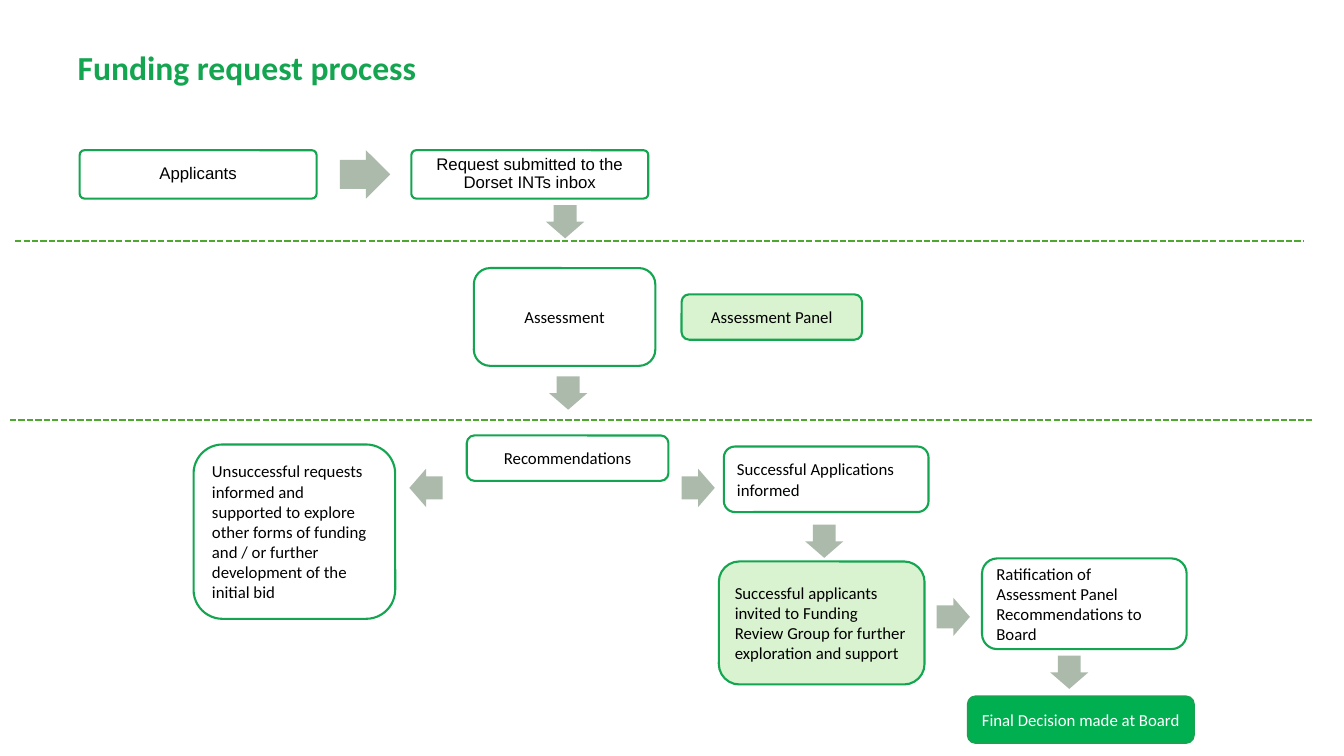
from typing import NamedTuple

from lxml.etree import SubElement
from pptx import Presentation
from pptx.dml.color import RGBColor
from pptx.enum.dml import MSO_LINE_DASH_STYLE as Dash
from pptx.enum.shapes import MSO_CONNECTOR as Connector, MSO_SHAPE as Shape
from pptx.enum.text import MSO_ANCHOR as Anchor, MSO_AUTO_SIZE as AutoSize, PP_ALIGN as Align
from pptx.oxml.ns import qn
from pptx.util import Emu, Pt

EMU_PER_PX = 9144  # 100 px to the inch
GREEN, DASH_GREEN, ARROW_GREY = "14A550", "4EA72E", "ACBAAC"
WHITE, BLACK, PALE_GREEN, DECISION_GREEN = "FFFFFF", "000000", "D9F2D0", "00B050"


class Step(NamedTuple):
    text: str
    left: int
    top: int
    width: int
    height: int
    fill: str = WHITE
    color: str = BLACK
    align: Align = Align.CENTER


class Arrow(NamedTuple):
    left: int
    top: int
    rotation: int = 0
    width: int = 33
    height: int = 38


class Divider(NamedTuple):
    left: int
    right: int
    y: int


REQUEST_STEPS = [
    Step("Applicants", 79, 149, 235, 48),
    Step("Request submitted to the Dorset INTs inbox", 408, 149, 235, 48),
]
REVIEW_STEPS = [
    Step("Assessment", 470, 266, 180, 97),
    Step("Assessment Panel", 676, 292, 179, 45, PALE_GREEN),
    Step("Recommendations", 463, 432, 200, 45),
    Step("Unsuccessful requests informed and supported to explore other forms of funding "
         "and / or further development of the initial bid",
         192, 441, 200, 173, align=Align.LEFT),
    Step("Successful Applications informed", 718, 443, 203, 65, align=Align.LEFT),
    Step("Successful applicants invited to Funding Review Group for further exploration "
         "and support", 713, 557, 204, 122, PALE_GREEN, align=Align.LEFT),
    Step("Ratification of Assessment Panel Recommendations to Board",
         974, 554, 203, 90, align=Align.LEFT),
    Step("Final Decision made at Board", 960, 691, 224, 46, DECISION_GREEN, WHITE),
]
ARROWS = [
    Arrow(337, 149, width=50, height=48),
    Arrow(544, 201, 90),
    Arrow(547, 371, 90),
    Arrow(406, 465, 180),
    Arrow(676, 465),
    Arrow(801, 518, 90),
    Arrow(929, 593),
    Arrow(1044, 648, 90),
]
DIVIDERS = [Divider(15, 1293, 239), Divider(10, 1303, 417)]


def px(length: int) -> Emu:
    return Emu(length * EMU_PER_PX)


def rgb(color: str) -> RGBColor:
    return RGBColor.from_string(color)


def add_run(paragraph, text: str, font_name: str, size: int, color: str, bold=False) -> None:
    run = paragraph.add_run()
    run.text = text
    run.font.name = font_name
    run.font.size = Pt(size)
    run.font.bold = bold
    run.font.color.rgb = rgb(color)


def add_filled_shape(slide, kind: Shape, left: int, top: int, width: int, height: int, fill: str):
    shape = slide.shapes.add_shape(kind, px(left), px(top), px(width), px(height))
    shape.shadow.inherit = False
    shape.fill.solid()
    shape.fill.fore_color.rgb = rgb(fill)
    return shape


def add_step(slide, step: Step, font_name: str = "Calibri", corner: float = 0.1667,
             margin: int = 10, line_spacing: float = 1.0) -> None:
    shape = add_filled_shape(slide, Shape.ROUNDED_RECTANGLE, step.left, step.top,
                             step.width, step.height, step.fill)
    shape.adjustments[0] = corner
    shape.line.color.rgb = rgb(GREEN)
    shape.line.width = Pt(1.5)
    frame = shape.text_frame
    frame.word_wrap = True
    frame.vertical_anchor = Anchor.MIDDLE
    frame.margin_left = frame.margin_right = px(margin)
    frame.margin_top = frame.margin_bottom = px(5)
    paragraph = frame.paragraphs[0]
    paragraph.alignment = step.align
    paragraph.line_spacing = line_spacing
    add_run(paragraph, step.text, font_name, 12, step.color)


def add_arrow(slide, arrow: Arrow) -> None:
    shape = add_filled_shape(slide, Shape.RIGHT_ARROW, arrow.left, arrow.top,
                             arrow.width, arrow.height, ARROW_GREY)
    shape.adjustments[0] = 0.6
    shape.adjustments[1] = 0.5
    shape.rotation = arrow.rotation
    shape.line.fill.background()


def add_divider(slide, divider: Divider) -> None:
    line = slide.shapes.add_connector(Connector.STRAIGHT, px(divider.left), px(divider.y),
                                      px(divider.right), px(divider.y))
    line.line.color.rgb = rgb(DASH_GREEN)
    line.line.width = Pt(1.5)
    line.line.dash_style = Dash.SQUARE_DOT
    SubElement(line._element.spPr, qn("a:effectLst"))


def format_title(slide) -> None:
    title = slide.shapes.title
    title.left, title.top, title.width, title.height = px(67), px(46), px(1150), px(57)
    frame = title.text_frame
    frame.word_wrap = True
    frame.auto_size = AutoSize.NONE
    frame.vertical_anchor = Anchor.TOP
    paragraph = frame.paragraphs[0]
    paragraph.alignment = Align.LEFT
    paragraph.line_spacing = 0.9
    add_run(paragraph, "Funding request process", "Calibri", 24, GREEN, bold=True)


def main() -> None:
    presentation = Presentation()
    presentation.slide_width, presentation.slide_height = px(1333), px(750)
    slide = presentation.slides.add_slide(presentation.slide_layouts[5])
    format_title(slide)
    for divider in DIVIDERS:
        add_divider(slide, divider)
    for step in REQUEST_STEPS:
        add_step(slide, step, "Arial", corner=0.1, margin=5, line_spacing=0.9)
    for step in REVIEW_STEPS:
        add_step(slide, step)
    for arrow in ARROWS:
        add_arrow(slide, arrow)
    presentation.save("out.pptx")


if __name__ == "__main__":
    main()
